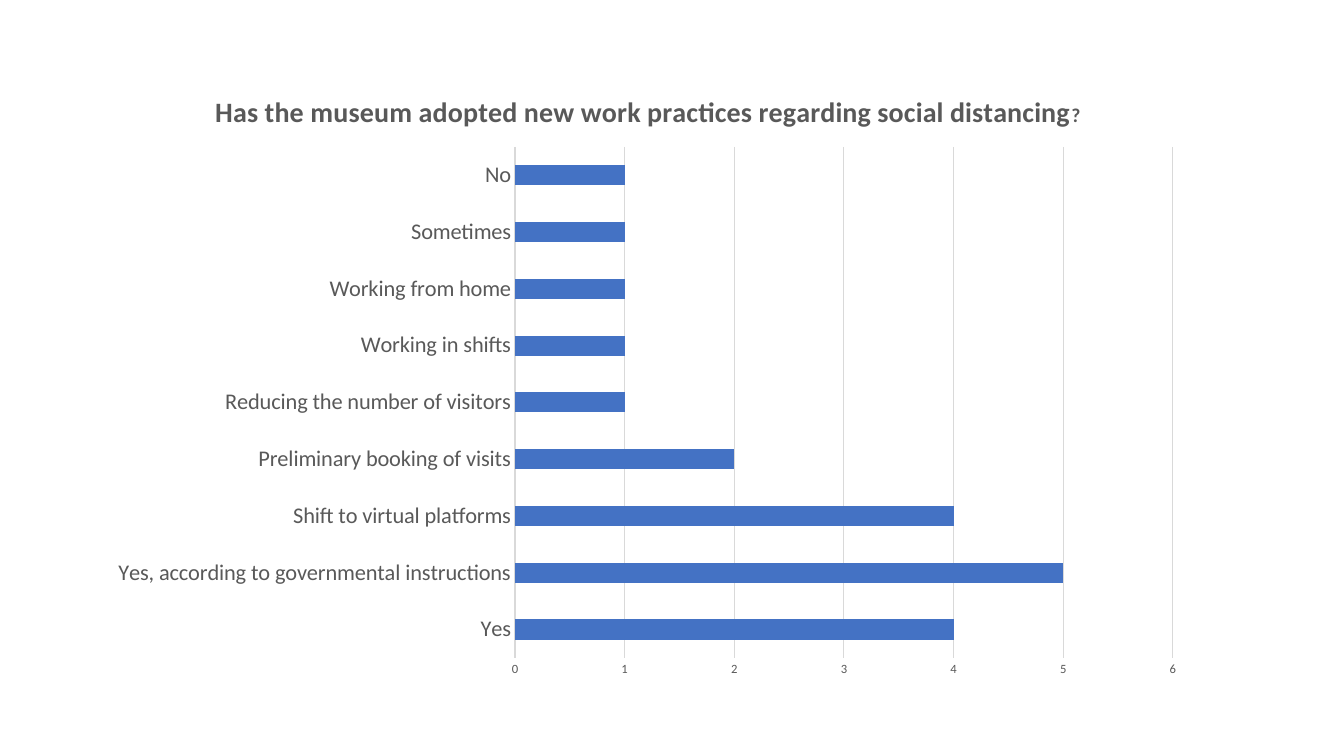
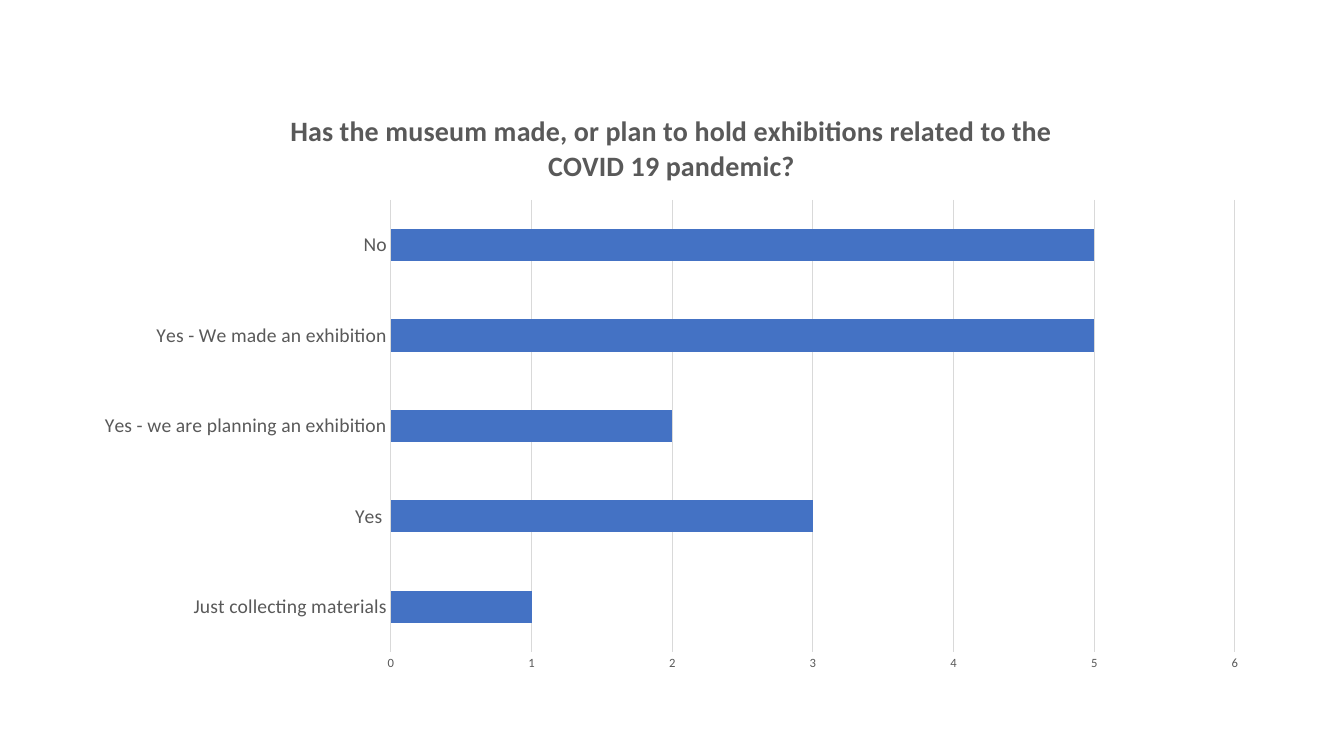
import dataclasses

import lxml.etree
import pptx
import pptx.chart.data
import pptx.dml.color
import pptx.enum.chart
import pptx.oxml.ns
import pptx.util

EMU_PER_PX = 914400 / 100.8


@dataclasses.dataclass(frozen=True)
class Theme:
    font: str = "Calibri"
    text: str = "595959"
    grid: str = "D9D9D9"
    bar: str = "4472C4"
    title_size: int = 20
    title_mark_size: int = 14
    value_size: int = 9
    line_width: float = 0.75
    gap: int = 182


THEME = Theme()


def px(length):
    return pptx.util.Emu(round(length * EMU_PER_PX))


def style_font(font, size, bold=False):
    font.name = THEME.font
    font.size = pptx.util.Pt(size)
    font.bold = bold
    font.color.rgb = pptx.dml.color.RGBColor.from_string(THEME.text)


# Survey questions: frame and plot are left, top, width, height in px;
# each title line is a list of (text, size) runs
questions = [
    {
        "title": [[
            ("Has the museum adopted new work practices regarding social distancing", THEME.title_size),
            ("?", THEME.title_mark_size),
        ]],
        "frame": (97, 72, 1102, 617),
        "plot": (515, 147, 658, 511),
        "label_size": 16,
        "answers": {
            "Yes": 4,
            "Yes, according to governmental instructions": 5,
            "Shift to virtual platforms": 4,
            "Preliminary booking of visits": 2,
            "Reducing the number of visitors": 1,
            "Working in shifts": 1,
            "Working from home": 1,
            "Sometimes": 1,
            "No": 1,
        },
    },
    {
        "title": [
            [("Has the museum made, or plan to hold exhibitions related to the", THEME.title_size)],
            [("COVID 19 pandemic?", THEME.title_size)],
        ],
        "frame": (82, 92, 1179, 592),
        "plot": (391, 200, 844, 452),
        "label_size": 14,
        "answers": {
            "Just collecting materials": 1,
            "Yes ": 3,
            "Yes - we are planning an exhibition": 2,
            "Yes - We made an exhibition": 5,
            "No": 5,
        },
    },
]

deck = pptx.Presentation()
deck.slide_width, deck.slide_height = px(1344), px(756)
blank_layout = deck.slide_layouts[6]

for question in questions:
    slide = deck.slides.add_slide(blank_layout)

    # Answers as horizontal bars
    survey = pptx.chart.data.CategoryChartData()
    survey.categories = list(question["answers"])
    survey.add_series("Series 1", list(question["answers"].values()))
    frame = question["frame"]
    chart = slide.shapes.add_chart(
        pptx.enum.chart.XL_CHART_TYPE.BAR_CLUSTERED, *map(px, frame), survey
    ).chart
    chart.has_legend = False
    chart.font.name = THEME.font
    chart.font.size = pptx.util.Pt(10)

    bars = chart.plots[0]
    bars.gap_width = THEME.gap
    bars.vary_by_categories = False
    fill = bars.series[0].format.fill
    fill.solid()
    fill.fore_color.rgb = pptx.dml.color.RGBColor.from_string(THEME.bar)

    # Question as chart title
    chart.has_title = True
    chart.chart_title.include_in_layout = False
    heading = chart.chart_title.text_frame
    for index, line in enumerate(question["title"]):
        paragraph = heading.add_paragraph() if index else heading.paragraphs[0]
        for text, size in line:
            run = paragraph.add_run()
            run.text = text
            style_font(run.font, size, bold=True)

    # Axes and gridlines
    answer_axis, count_axis = chart.category_axis, chart.value_axis
    for axis, size in ((answer_axis, question["label_size"]), (count_axis, THEME.value_size)):
        axis.major_tick_mark = pptx.enum.chart.XL_TICK_MARK.NONE
        axis.minor_tick_mark = pptx.enum.chart.XL_TICK_MARK.NONE
        style_font(axis.tick_labels.font, size)
    count_axis.minimum_scale, count_axis.maximum_scale = 0, 6
    count_axis.major_unit = 1
    count_axis.has_major_gridlines = True
    count_axis.format.line.fill.background()
    for rule in (answer_axis.format.line, count_axis.major_gridlines.format.line):
        rule.color.rgb = pptx.dml.color.RGBColor.from_string(THEME.grid)
        rule.width = pptx.util.Pt(THEME.line_width)

    # Fixed inner plot area, as fractions of the chart frame
    qn = pptx.oxml.ns.qn
    plot_area = chart.element.find(".//" + qn("c:plotArea"))
    for automatic in plot_area.findall(qn("c:layout")):
        plot_area.remove(automatic)
    layout = lxml.etree.Element(qn("c:layout"))
    plot_area.insert(0, layout)
    manual = lxml.etree.SubElement(layout, qn("c:manualLayout"))
    left, top, width, height = question["plot"]
    settings = {
        "layoutTarget": "inner",
        "xMode": "edge",
        "yMode": "edge",
        "x": (left - frame[0]) / frame[2],
        "y": (top - frame[1]) / frame[3],
        "w": width / frame[2],
        "h": height / frame[3],
    }
    for tag, value in settings.items():
        lxml.etree.SubElement(manual, qn("c:" + tag), val=str(value))

deck.save("out.pptx")
